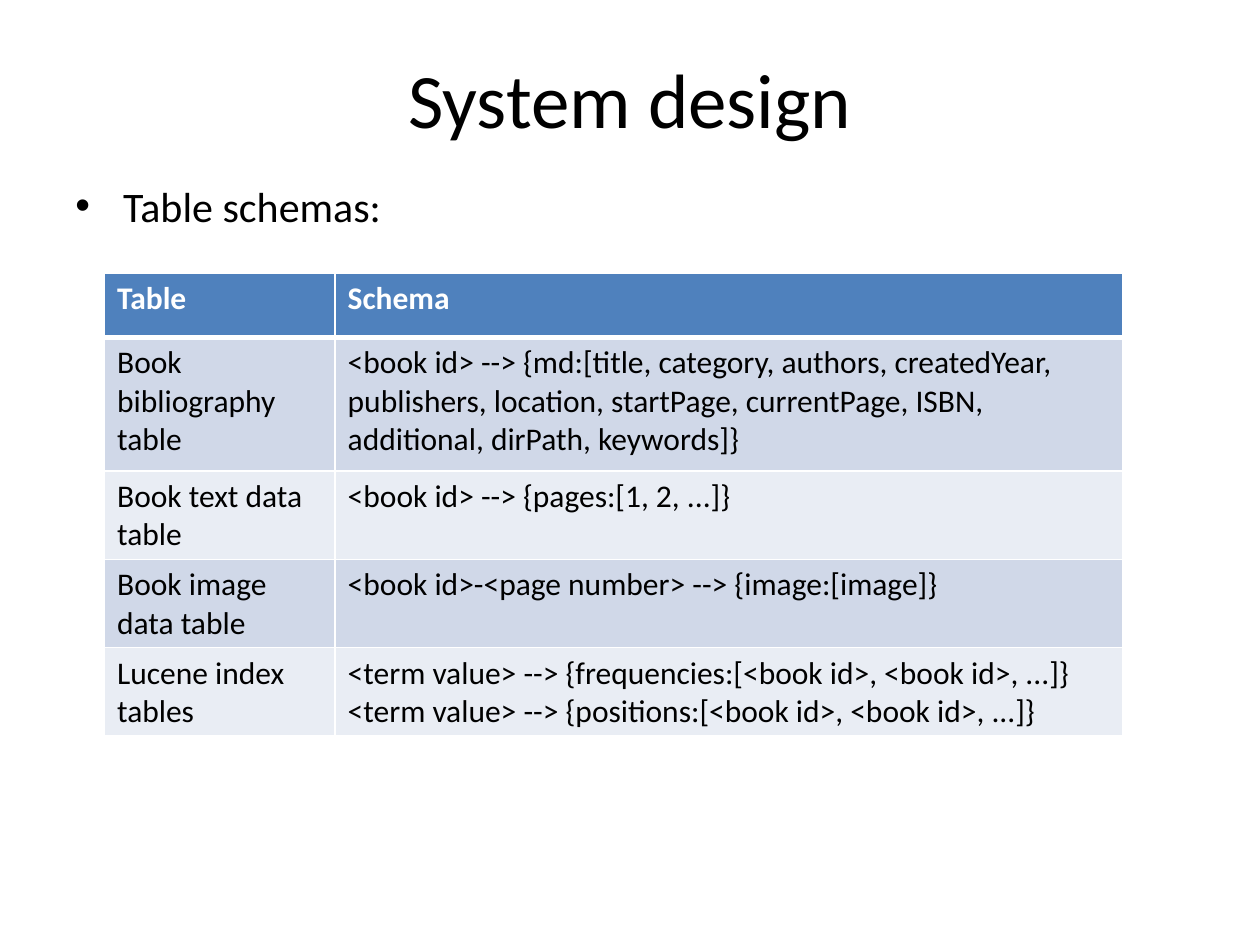
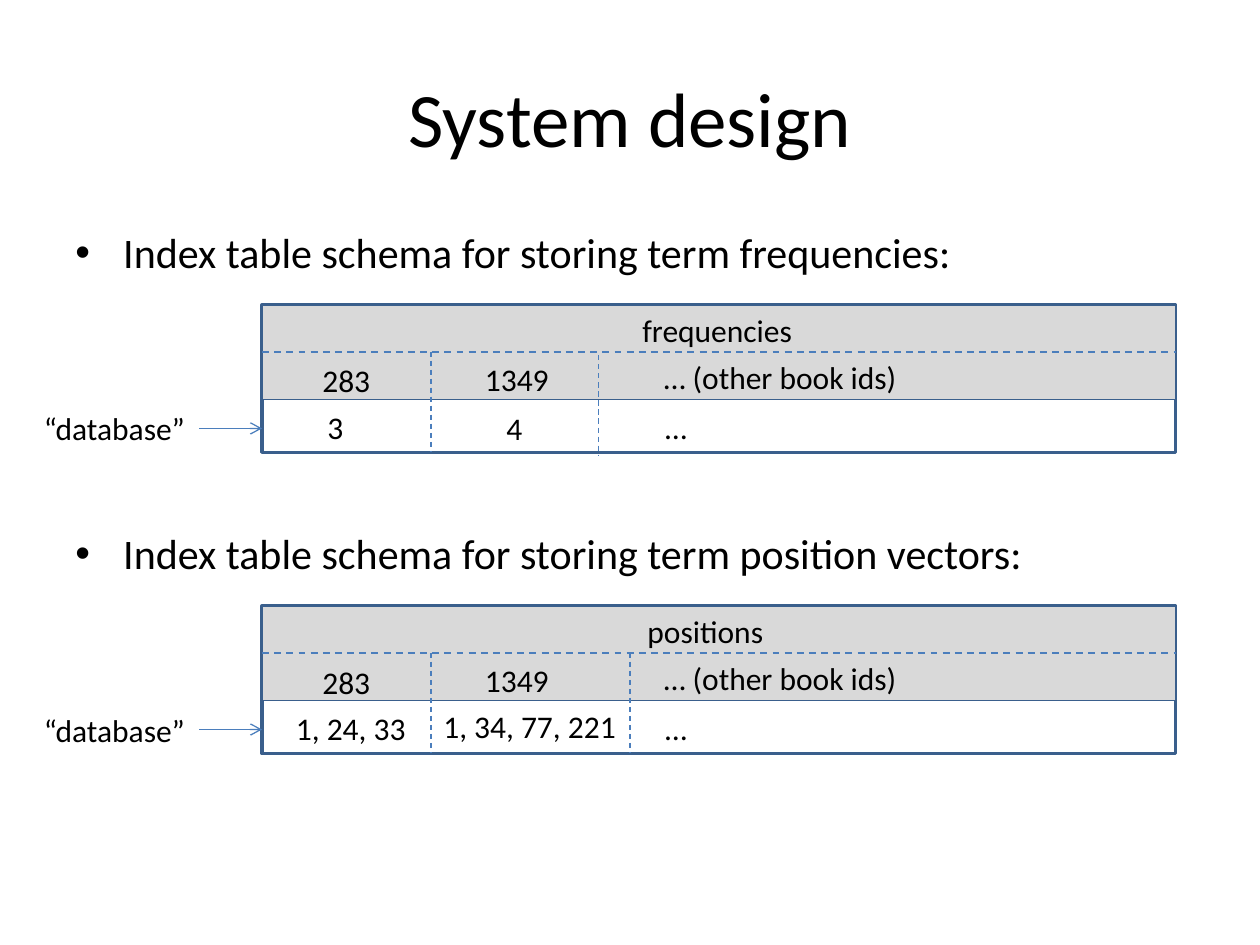
from dataclasses import dataclass

import lxml.etree
import pptx
import pptx.dml.color
import pptx.enum.dml
import pptx.enum.shapes
import pptx.enum.text
import pptx.oxml.ns
import pptx.util

EMU_PER_PX = 9144
SLIDE_WIDTH, SLIDE_HEIGHT = 1000, 750
TITLE_ONLY_LAYOUT = 5


@dataclass(frozen=True)
class Theme:
    font: str = "Calibri"
    title_size: int = 44
    bullet_size: int = 24
    text_size: int = 18
    text: str = "000000"
    white: str = "FFFFFF"
    table_header: str = "4F81BD"
    table_bands: tuple[str, str] = ("D0D8E8", "E9EDF4")
    schema_header: str = "D9D9D9"
    outline: str = "3A5F8C"
    connector: str = "4B7EBC"


@dataclass(frozen=True)
class Box:
    left: int
    top: int
    width: int
    height: int

    def emu(self) -> tuple[int, ...]:
        return tuple(px(value) for value in (self.left, self.top, self.width, self.height))


@dataclass(frozen=True)
class Label:
    text: str
    left: int
    top: int
    width: int


@dataclass(frozen=True)
class Divider:
    left: int
    top: int


@dataclass(frozen=True)
class IndexSchema:
    heading: str
    top: int
    dividers: tuple[Divider, ...]
    labels: tuple[Label, ...]


THEME = Theme()
LABEL_HEIGHT = 40
BULLET_HEIGHT = 50
HEADING_GAP = 67
SCHEMA_LEFT, SCHEMA_WIDTH = 208, 725
SCHEMA_HEIGHT, SCHEMA_HEADER_HEIGHT = 117, 75
DIVIDER_HEIGHT = 79
ARROW_LEFT, ARROW_TOP = 158, 98

TABLE_BOX = Box(83, 217, 808, 367)
COLUMN_WIDTHS = (183, 625)
ROW_HEIGHTS = (51, 106, 70, 70, 70)
TABLE_ROWS = (
    ("Table", "Schema"),
    (
        "Book bibliography table",
        "<book id> --> {md:[title, category, authors, createdYear, publishers, "
        "location, startPage, currentPage, ISBN, additional, dirPath, keywords]}",
    ),
    ("Book text data table", "<book id> --> {pages:[1, 2, ...]}"),
    ("Book image data table", "<book id>-<page number> --> {image:[image]}"),
    (
        "Lucene index tables",
        "<term value> --> {frequencies:[<book id>, <book id>, ...]}\n"
        "<term value> --> {positions:[<book id>, <book id>, ...]}",
    ),
)

SHARED_LABELS = (
    Label("283", 246, 40, 92),
    Label("1349", 375, 39, 92),
    Label("… (other book ids)", 517, 37, 258),
    Label("“database”", 25, 78, 133),
    Label("…", 518, 77, 65),
)
INDEX_SCHEMAS = (
    IndexSchema(
        "Index table schema for storing term frequencies:",
        175,
        (Divider(342, 37), Divider(475, 40)),
        (
            Label("frequencies", 500, 0, 162),
            Label("3", 250, 77, 67),
            Label("4", 392, 78, 67),
        ),
    ),
    IndexSchema(
        "Index table schema for storing term position vectors:",
        414,
        (Divider(342, 37), Divider(500, 37)),
        (
            Label("positions", 504, 0, 162),
            Label("1, 24, 33", 225, 77, 108),
            Label("1, 34, 77, 221", 342, 75, 168),
        ),
    ),
)


def px(value: int) -> int:
    return value * EMU_PER_PX


def rgb(color: str) -> pptx.dml.color.RGBColor:
    return pptx.dml.color.RGBColor.from_string(color)


def add_xml(parent, tag: str, **attributes: str):
    return lxml.etree.SubElement(parent, pptx.oxml.ns.qn(tag), attributes)


def add_run(paragraph, text: str, size: int, color: str = THEME.text, bold: bool = False) -> None:
    run = paragraph.add_run()
    run.text = text
    run.font.name = THEME.font
    run.font.size = pptx.util.Pt(size)
    run.font.bold = bold
    run.font.color.rgb = rgb(color)


def add_titled_slide(presentation, box: Box):
    slide = presentation.slides.add_slide(presentation.slide_layouts[TITLE_ONLY_LAYOUT])
    title = slide.shapes.title
    title.left, title.top, title.width, title.height = box.emu()
    title.text_frame.vertical_anchor = pptx.enum.text.MSO_ANCHOR.MIDDLE
    paragraph = title.text_frame.paragraphs[0]
    paragraph.alignment = pptx.enum.text.PP_ALIGN.CENTER
    add_run(paragraph, "System design", THEME.title_size)
    return slide


def add_text_box(slide, box: Box, text: str, size: int):
    shape = slide.shapes.add_textbox(*box.emu())
    shape.text_frame.word_wrap = True
    add_run(shape.text_frame.paragraphs[0], text, size)
    return shape


def add_bullet(slide, text: str, top: int) -> None:
    box = Box(50, top, 900, BULLET_HEIGHT)
    shape = add_text_box(slide, box, text, THEME.bullet_size)
    paragraph = shape.text_frame.paragraphs[0]
    paragraph.space_before = pptx.util.Pt(THEME.bullet_size * 0.2)
    properties = paragraph._p.get_or_add_pPr()
    properties.set("marL", str(px(38)))
    properties.set("indent", str(px(-38)))
    add_xml(properties, "a:buFont", typeface="Arial")
    add_xml(properties, "a:buChar", char="•")


def add_label(slide, label: Label, origin: int) -> None:
    box = Box(label.left, origin + label.top, label.width, LABEL_HEIGHT)
    shape = add_text_box(slide, box, label.text, THEME.text_size)
    shape.text_frame.auto_size = pptx.enum.text.MSO_AUTO_SIZE.SHAPE_TO_FIT_TEXT


def add_rectangle(slide, box: Box, line_width: int, fill: str | None = None):
    shape = slide.shapes.add_shape(pptx.enum.shapes.MSO_SHAPE.RECTANGLE, *box.emu())
    shape.shadow.inherit = False
    if fill:
        shape.fill.solid()
        shape.fill.fore_color.rgb = rgb(fill)
    else:
        shape.fill.background()
    shape.line.color.rgb = rgb(THEME.outline)
    shape.line.width = pptx.util.Pt(line_width)
    return shape


def add_line(
    slide, start: tuple[int, int], end: tuple[int, int], width: float = 0.75, dashed: bool = True
):
    connector = slide.shapes.add_connector(
        pptx.enum.shapes.MSO_CONNECTOR.STRAIGHT, *map(px, start + end)
    )
    connector.line.color.rgb = rgb(THEME.connector)
    connector.line.width = pptx.util.Pt(width)
    if dashed:
        connector.line.dash_style = pptx.enum.dml.MSO_LINE.DASH
    add_xml(connector._element.spPr, "a:effectLst")
    return connector


def set_borders(cell, top: int, bottom: int) -> None:
    properties = cell._tc.get_or_add_tcPr()
    widths = {"a:lnL": 1, "a:lnR": 1, "a:lnT": top, "a:lnB": bottom}
    for index, (tag, width) in enumerate(widths.items()):
        border = add_xml(properties, tag, w=str(pptx.util.Pt(width)))
        add_xml(add_xml(border, "a:solidFill"), "a:srgbClr", val=THEME.white)
        properties.insert(index, border)


def fill_cell(cell, text: str, row: int) -> None:
    is_header = row == 0
    cell.fill.solid()
    fill = THEME.table_header if is_header else THEME.table_bands[(row - 1) % 2]
    cell.fill.fore_color.rgb = rgb(fill)
    set_borders(cell, top=3 if row == 1 else 1, bottom=3 if is_header else 1)
    color = THEME.white if is_header else THEME.text
    for index, line in enumerate(text.split("\n")):
        frame = cell.text_frame
        paragraph = frame.add_paragraph() if index else frame.paragraphs[0]
        add_run(paragraph, line, THEME.text_size, color, is_header)


def add_schema_table(slide) -> None:
    frame = slide.shapes.add_table(len(TABLE_ROWS), len(COLUMN_WIDTHS), *TABLE_BOX.emu())
    table = frame.table
    for column, width in zip(table.columns, COLUMN_WIDTHS):
        column.width = px(width)
    for row, (texts, height) in enumerate(zip(TABLE_ROWS, ROW_HEIGHTS)):
        table.rows[row].height = px(height)
        for column, text in enumerate(texts):
            fill_cell(table.cell(row, column), text, row)


def add_index_schema(slide, schema: IndexSchema) -> None:
    add_bullet(slide, schema.heading, schema.top)
    top = schema.top + HEADING_GAP
    right = SCHEMA_LEFT + SCHEMA_WIDTH
    add_rectangle(slide, Box(SCHEMA_LEFT, top, SCHEMA_WIDTH, SCHEMA_HEIGHT), 2)
    header_box = Box(SCHEMA_LEFT, top, SCHEMA_WIDTH, SCHEMA_HEADER_HEIGHT)
    header = add_rectangle(slide, header_box, 1, THEME.schema_header)
    middle = top + SCHEMA_HEADER_HEIGHT // 2
    separator = add_line(slide, (SCHEMA_LEFT, middle), (right, middle), 1)
    separator.begin_connect(header, 1)
    separator.end_connect(header, 3)
    for divider in schema.dividers:
        start = top + divider.top
        add_line(slide, (divider.left, start), (divider.left, start + DIVIDER_HEIGHT))
    arrow_top = top + ARROW_TOP
    arrow = add_line(slide, (ARROW_LEFT, arrow_top), (SCHEMA_LEFT, arrow_top), dashed=False)
    add_xml(arrow.line._get_or_add_ln(), "a:tailEnd", type="arrow")
    for label in SHARED_LABELS + schema.labels:
        add_label(slide, label, top)


def main() -> None:
    presentation = pptx.Presentation()
    presentation.slide_width = px(SLIDE_WIDTH)
    presentation.slide_height = px(SLIDE_HEIGHT)

    tables_slide = add_titled_slide(presentation, Box(50, 30, 900, 95))
    add_bullet(tables_slide, "Table schemas:", 138)
    add_schema_table(tables_slide)

    index_slide = add_titled_slide(presentation, Box(50, 30, 900, 125))
    for schema in INDEX_SCHEMAS:
        add_index_schema(index_slide, schema)

    presentation.save("out.pptx")


if __name__ == "__main__":
    main()
